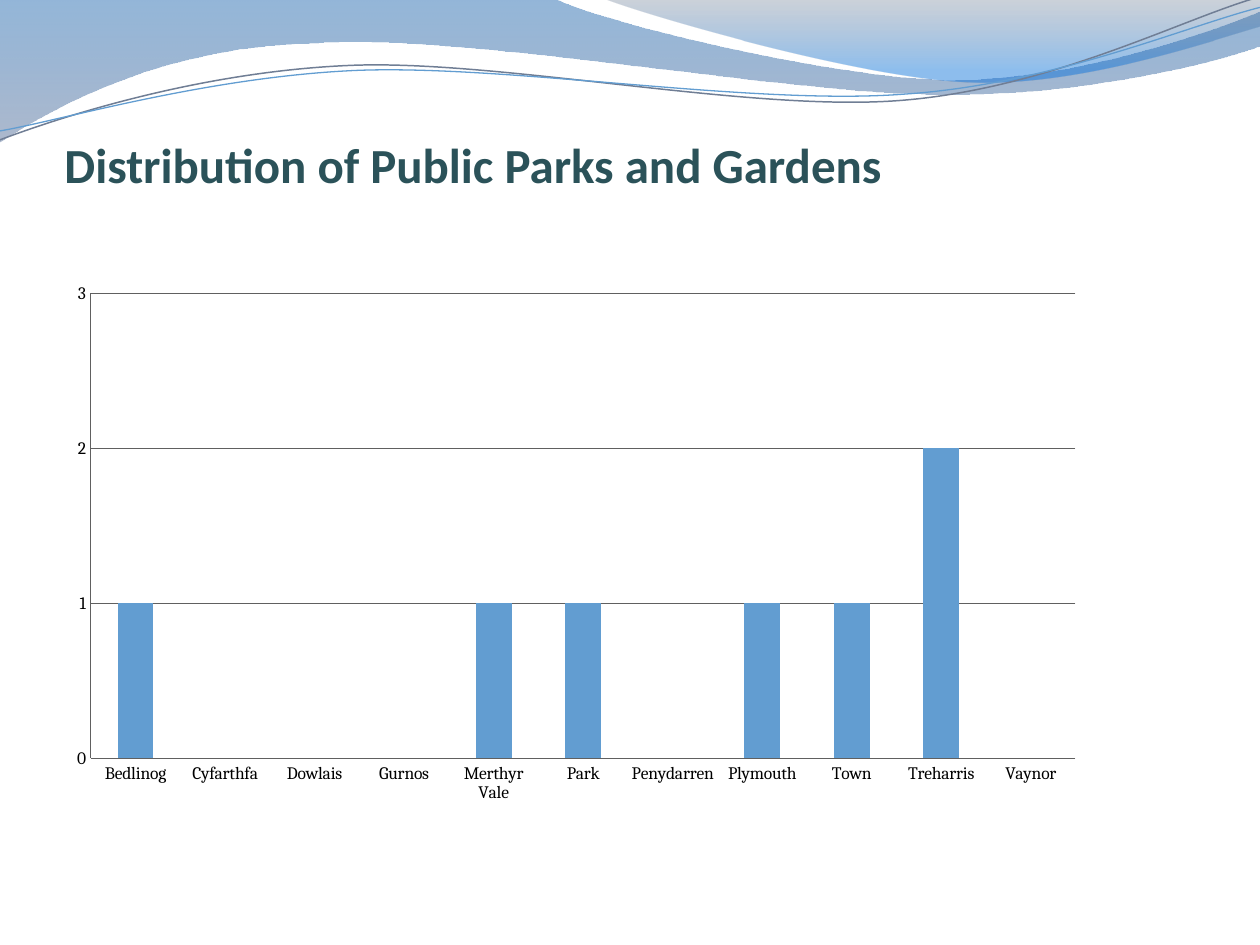
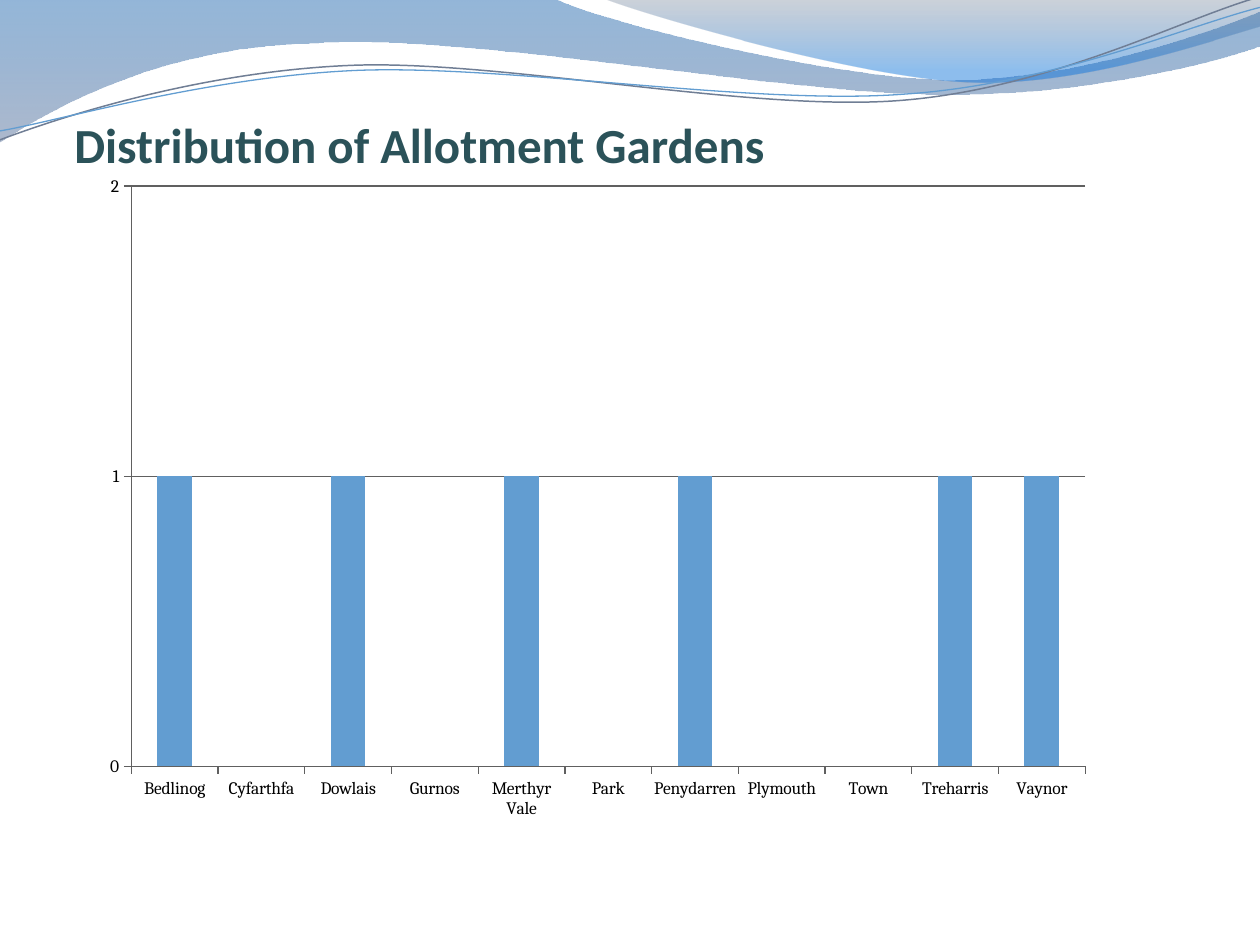
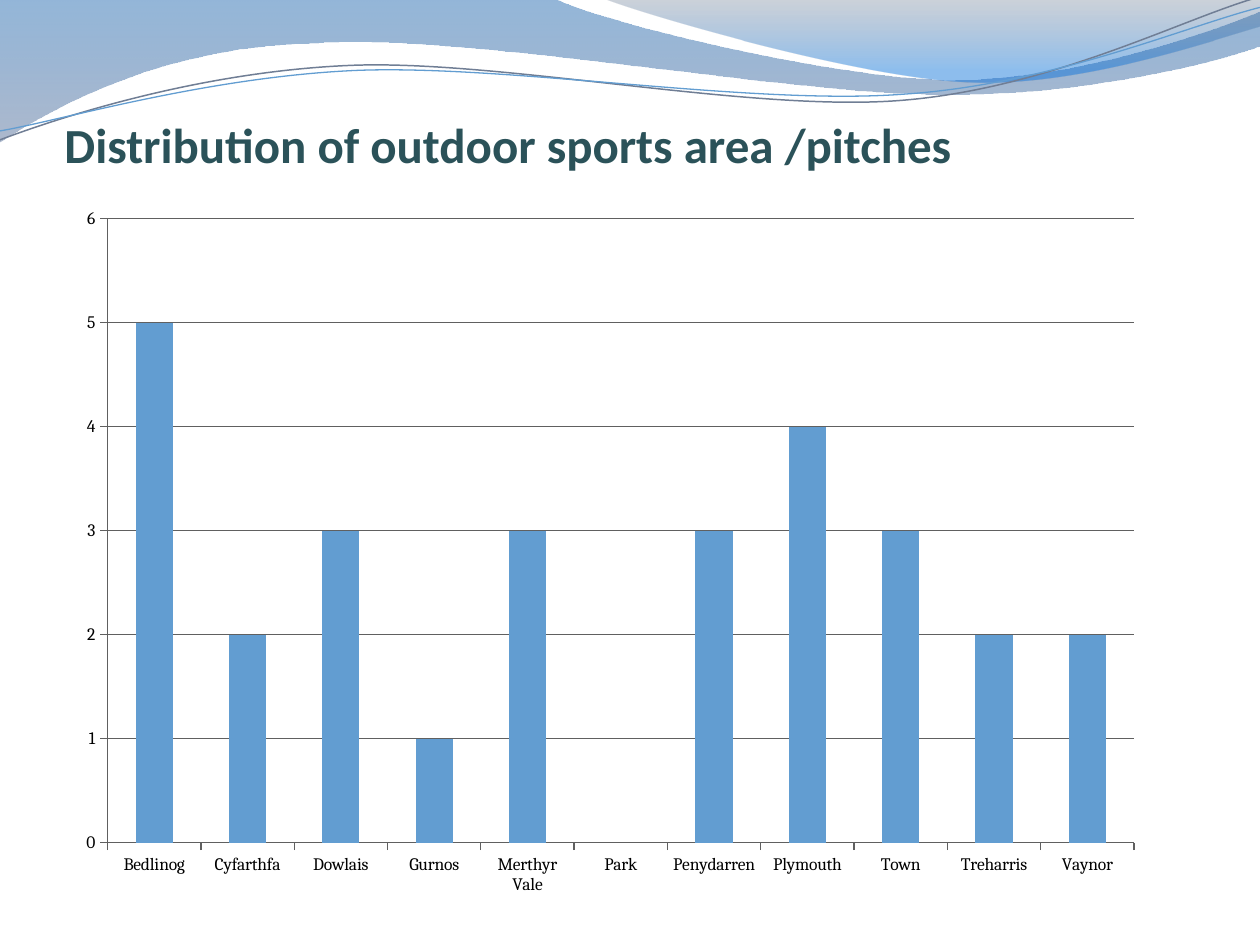
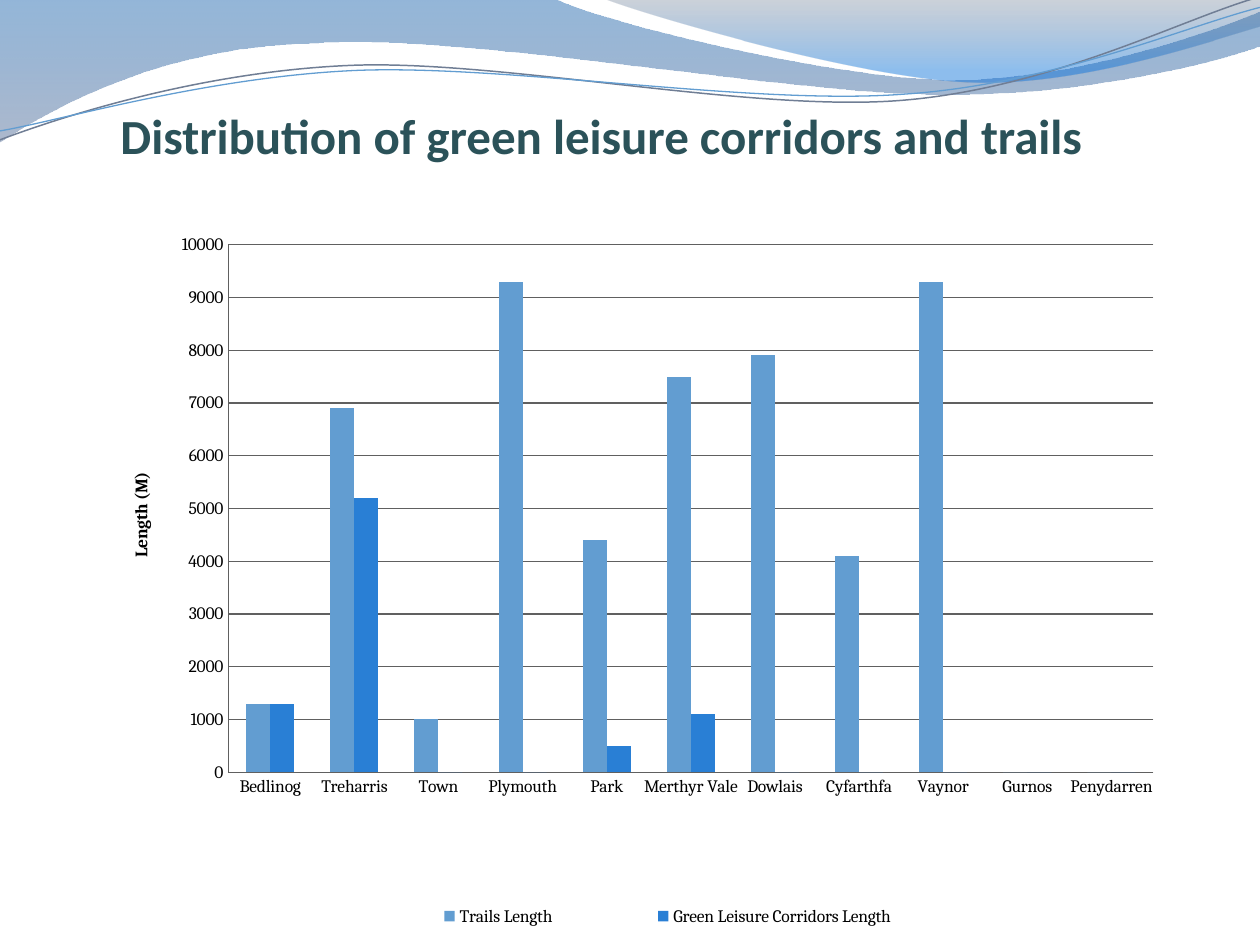
from lxml.etree import SubElement
from pptx import Presentation
from pptx.chart.data import CategoryChartData
from pptx.dml.color import RGBColor
from pptx.enum.chart import XL_CHART_TYPE, XL_LEGEND_POSITION, XL_TICK_MARK as TICK
from pptx.enum.text import MSO_ANCHOR as ANCHOR, MSO_AUTO_SIZE, PP_ALIGN as ALIGN
from pptx.oxml.ns import qn
from pptx.oxml.xmlchemy import OxmlElement
from pptx.util import Cm, Pt

# Colours and fonts
TEAL = RGBColor(0x2B, 0x52, 0x59)
BLACK = RGBColor(0, 0, 0)
GRID = RGBColor(0x60, 0x60, 0x60)
SKY = RGBColor(0x62, 0x9D, 0xD1)
BLUE = RGBColor(0x29, 0x7F, 0xD5)
NAVY = RGBColor(0x12, 0x5E, 0xAA)
SLATE = RGBColor(0x69, 0x7F, 0xA4)
STEEL = RGBColor(0x59, 0x69, 0x82)
AZURE = RGBColor(0x06, 0x70, 0xDA)
GREY_BLUE = RGBColor(0x70, 0x7E, 0x95)

TITLE_FONT = {"name": "Calibri", "size": Pt(28), "bold": True}
CHART_FONT = {"name": "Cambria", "size": Pt(10)}

# Title frames
BOTTOM_LEFT = {"vertical_anchor": ANCHOR.BOTTOM, "margin_left": 0,
               "margin_right": 0, "margin_top": Cm(0.13), "margin_bottom": 0}
MIDDLE = {"vertical_anchor": ANCHOR.MIDDLE, "margin_left": Cm(0.25),
          "margin_right": Cm(0.25), "margin_top": Cm(0.13),
          "margin_bottom": Cm(0.13)}

# Waves in cm: a pair is a straight step, a six-tuple is a Bezier curve
# Gradient stops are position, colour, opacity in percent
WAVES = [
    {"start": (0, 0),
     "steps": [(11.18, -0.03),
               (12.09, 0.43, 16.87, 1.6, 19.25, 1.6),
               (21.67, 1.6, 24.33, 0.66, 25.4, 0.23),
               (25.43, 0.91),
               (24.97, 1.12, 22.1, 1.93, 18.95, 1.9),
               (15.8, 1.9, 9.7, 0.71, 6.53, 0.86),
               (3.28, 0.91, 1.17, 2.11, -0.03, 2.87),
               (0, 0)],
     "stops": [(0, NAVY, 45), (1, SLATE, 55)]},
    {"start": (12.17, -0.03),
     "steps": [(12.93, 0.28, 17.32, 1.57, 19.53, 1.65),
               (21.74, 1.75, 24.41, 0.81, 25.4, 0.53),
               (25.4, 0),
               (12.17, -0.03)],
     "stops": [(0, STEEL, 30), (0.8, AZURE, 45)]},
    {"start": (0, 2.82),
     "steps": [(1.22, 2.36, 4.01, 1.45, 7.04, 1.32),
               (10.03, 1.19, 15.06, 2.26, 18.11, 2.03),
               (21.16, 1.8, 23.83, 0.38, 25.35, -0.05)],
     "line": (GREY_BLUE, 0.85)},
    {"start": (0, 2.64),
     "steps": [(1.19, 2.44, 4.17, 1.55, 7.19, 1.42),
               (10.24, 1.3, 15.16, 2.13, 18.21, 1.9),
               (21.23, 1.7, 23.9, 0.53, 25.4, 0.15)],
     "line": (SKY, 0.75)},
]

WARDS = ["Bedlinog", "Cyfarthfa", "Dowlais", "Gurnos", "Merthyr Vale", "Park",
         "Penydarren", "Plymouth", "Town", "Treharris", "Vaynor"]
TRAIL_WARDS = ["Bedlinog", "Treharris", "Town", "Plymouth", "Park",
               "Merthyr Vale", "Dowlais", "Cyfarthfa", "Vaynor", "Gurnos",
               "Penydarren"]

# Slide content; boxes are left, top, width, height in cm,
# and parts inside a chart are in percent of its size
SLIDES = [
    {"title": "Distribution of Public Parks and Gardens",
     "title_box": (1.3, 0.72, 23.06, 3.18),
     "chart_box": (1.09, 4.11, 21.79, 13.28),
     "plot": (3.4, 13.6, 91.1, 70.6),
     "tick": TICK.NONE, "top": 3, "unit": 1, "cats": WARDS,
     "series": [("Series 1", SKY,
                 [1, None, None, None, 1, 1, None, 1, 1, 2, None])]},
    {"title": "Distribution of Allotment Gardens",
     "title_box": (1.5, 0.31, 23.06, 3.18),
     "chart_box": (1.7, 3.33, 20.19, 14.6),
     "plot": (4.7, 2.9, 95.3, 80.1),
     "tick": TICK.OUTSIDE, "top": 2, "unit": 1, "cats": WARDS,
     "series": [("Series 1", SKY,
                 [1, None, 1, None, 1, None, 1, None, None, 1, 1])]},
    {"title": "Distribution of outdoor sports area /pitches",
     "title_box": (1.3, 0.31, 23.06, 3.18),
     "chart_box": (1.3, 3.92, 22, 14.4),
     "tick": TICK.OUTSIDE, "top": 6, "unit": 1, "cats": WARDS,
     "series": [("Series 1", SKY, [5, 2, 3, 1, 3, None, 3, 4, 3, 2, 2])]},
    {"title": "Distribution of green leisure corridors and trails",
     "title_box": (1.12, 1.12, 22, 3.18),
     "frame": MIDDLE, "align": ALIGN.CENTER,
     "chart_box": (1.27, 3.12, 24.13, 16.21),
     "plot": (13.8, 11.2, 77.3, 65.6),
     "tick": TICK.NONE, "top": 10000, "unit": 1000, "cats": TRAIL_WARDS,
     "format": "General",
     "axis_title": "Length (M)", "axis_title_at": (5.3, 39.1),
     "legend": (23.5, 92.2, 54, 5),
     "series": [("Trails Length", SKY,
                 [1300, 6900, 1000, 9300, 4400, 7500, 7900, 4100, 9300, 0, 0]),
                ("Green Leisure Corridors Length", BLUE,
                 [1300, 5200, 0, 0, 500, 1100, 0, 0, 0, 0, 0])]},
]


def assign(obj, values):
    for name, value in values.items():
        setattr(obj, name, value)


def set_font(font, values, color):
    assign(font, values)
    font.color.rgb = color


def set_line(line, color, width=0.75):
    line.color.rgb = color
    line.width = Pt(width)


# Waves on the master
def draw_outline(s, start, steps, close):
    """Draw through all the points, then turn each curve's three into a Bezier."""
    builder = s.shapes.build_freeform(*map(Cm, start))
    points = [(Cm(x), Cm(y)) for step in steps
              for x, y in zip(step[::2], step[1::2])]
    builder.add_line_segments(points, close=close)
    sp = builder.convert_to_shape()
    segments = iter(list(sp.element.spPr.iter(qn("a:lnTo"))))
    for step in steps:
        group = [next(segments) for _ in range(len(step) // 2)]
        if len(group) == 3:
            curve = OxmlElement("a:cubicBezTo")
            group[0].addprevious(curve)
            for segment in group:
                curve.append(segment[0])
                segment.getparent().remove(segment)
    return sp


def fill_gradient(sp, stops):
    sp.fill.gradient()
    sp.fill.gradient_angle = 270
    for stop, (position, color, _) in zip(sp.fill.gradient_stops, stops):
        stop.position = position
        stop.color.rgb = color
    colors = sp.element.spPr.iter(qn("a:srgbClr"))
    for clr, (_, _, opacity) in zip(list(colors), stops):
        SubElement(clr, qn("a:alpha")).set("val", str(opacity * 1000))


def add_waves(s, master):
    tree = master.shapes.element
    for i, wave in enumerate(WAVES):
        sp = draw_outline(s, wave["start"], wave["steps"], "stops" in wave)
        sp.shadow.inherit = False
        if "stops" in wave:
            fill_gradient(sp, wave["stops"])
            sp.line.fill.background()
        else:
            sp.fill.background()
            set_line(sp.line, *wave["line"])
        sp.name = f"Wave {i + 1}"
        sp.element.nvSpPr.cNvPr.set("id", str(101 + i))
        tree.insert(2 + i, sp.element)


# Titles
def add_title(s, item):
    sp = s.shapes.title
    sp.left, sp.top, sp.width, sp.height = map(Cm, item["title_box"])
    tf = sp.text_frame
    assign(tf, item.get("frame", BOTTOM_LEFT))
    assign(tf, {"word_wrap": True, "auto_size": MSO_AUTO_SIZE.NONE})
    p = tf.paragraphs[0]
    p.alignment = item.get("align", ALIGN.LEFT)
    r = p.add_run()
    r.text = item["title"]
    set_font(r.font, TITLE_FONT, TEAL)


# Charts
def place(part, index, box, inner=False):
    """Fix a chart part at percentages of the chart area."""
    layout = part.find(qn("c:layout"))
    if layout is None:
        layout = OxmlElement("c:layout")
        part.insert(index, layout)
    manual = SubElement(layout, qn("c:manualLayout"))
    values = [("layoutTarget", "inner")] if inner else []
    values += [("xMode", "edge"), ("yMode", "edge")]
    values += [(tag, round(v / 100, 3)) for tag, v in zip("xywh", box)]
    for tag, value in values:
        SubElement(manual, qn(f"c:{tag}")).set("val", str(value))


def add_bar_chart(s, item):
    data = CategoryChartData()
    data.categories = item["cats"]
    for name, _, values in item["series"]:
        data.add_series(name, values)
    chart = s.shapes.add_chart(XL_CHART_TYPE.COLUMN_CLUSTERED,
                               *map(Cm, item["chart_box"]), data).chart
    chart.has_title = False
    set_font(chart.font, CHART_FONT, BLACK)

    plot = chart.plots[0]
    assign(plot, {"gap_width": 150, "overlap": 0, "vary_by_categories": False})
    for series, (_, color, _) in zip(plot.series, item["series"]):
        series.format.fill.solid()
        series.format.fill.fore_color.rgb = color
    if "plot" in item:
        place(chart.element.chart.plotArea, 0, item["plot"], inner=True)

    val_axis = chart.value_axis
    for axis in (chart.category_axis, val_axis):
        axis.major_tick_mark = item["tick"]
        axis.minor_tick_mark = TICK.NONE
        set_line(axis.format.line, GRID)
    assign(val_axis, {"minimum_scale": 0, "maximum_scale": item["top"],
                      "major_unit": item["unit"], "has_major_gridlines": True})
    set_line(val_axis.major_gridlines.format.line, GRID)
    assign(val_axis.tick_labels, {"number_format": item.get("format", "#,##0"),
                                  "number_format_is_linked": False})

    if "axis_title" in item:
        title = val_axis.axis_title
        r = title.text_frame.paragraphs[0].add_run()
        r.text = item["axis_title"]
        set_font(r.font, {**CHART_FONT, "bold": True}, BLACK)
        place(title.element, 1, item["axis_title_at"])

    chart.has_legend = "legend" in item
    if chart.has_legend:
        legend = chart.legend
        assign(legend, {"position": XL_LEGEND_POSITION.RIGHT,
                        "include_in_layout": False})
        set_font(legend.font, CHART_FONT, BLACK)
        place(chart.element.chart.find(qn("c:legend")), 1, item["legend"])


def main():
    prs = Presentation()
    prs.slide_width, prs.slide_height = Cm(25.4), Cm(19.05)
    title_only = prs.slide_layouts[5]
    for i, item in enumerate(SLIDES):
        s = prs.slides.add_slide(title_only)
        if i == 0:
            add_waves(s, prs.slide_master)
        add_bar_chart(s, item)
        add_title(s, item)
    prs.save("out.pptx")


if __name__ == "__main__":
    main()
